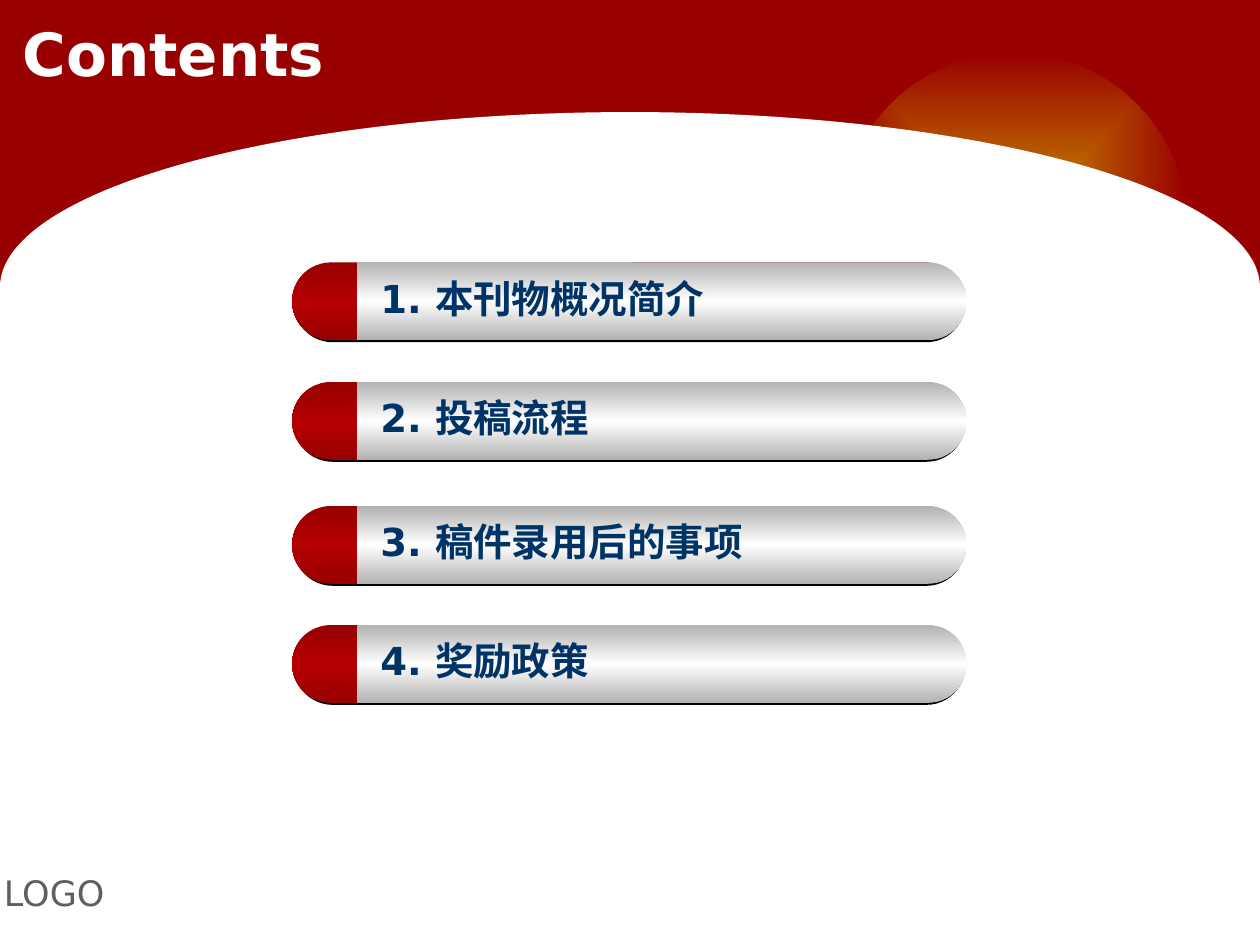
from lxml import etree
from pptx import Presentation
from pptx.dml.color import RGBColor
from pptx.enum.shapes import MSO_SHAPE
from pptx.enum.text import MSO_ANCHOR, MSO_AUTO_SIZE
from pptx.oxml.ns import qn
from pptx.util import Cm, Pt

RED = RGBColor(0x99, 0x00, 0x00)
BRIGHT_RED = RGBColor(0xB4, 0x00, 0x00)
GOLD = RGBColor(0xCC, 0x99, 0x00)
SILVER = RGBColor(0xB2, 0xB2, 0xB2)
GREY = RGBColor(0x5F, 0x5F, 0x5F)
NAVY = RGBColor(0x00, 0x33, 0x66)
WHITE = RGBColor(0xFF, 0xFF, 0xFF)
BLACK = RGBColor(0x00, 0x00, 0x00)

LATIN = "DejaVu Sans"
CJK = "Noto Sans CJK SC"
TIGHT = (0.05, 0.03)  # horizontal and vertical text inset, cm

# number, topic, top of the bar, width of the label (cm)
ITEMS = [
    ("1. ", "本刊物概况简介", 5.29, 8.61),
    ("2. ", "投稿流程", 7.7, 8.61),
    ("3. ", "稿件录用后的事项", 10.2, 10.52),
    ("4. ", "奖励政策", 12.6, 10.52),
]


def set_gradient(sp, colors, radial=False):
    """Spread the colours evenly, top to bottom or from the centre out."""
    sp.fill.gradient()
    grad = sp._element.spPr.find(qn("a:gradFill"))
    for child in list(grad):
        grad.remove(child)
    stops = etree.SubElement(grad, qn("a:gsLst"))
    for i, color in enumerate(colors):
        pos = 100000 * i // (len(colors) - 1)
        stop = etree.SubElement(stops, qn("a:gs"), pos=str(pos))
        etree.SubElement(stop, qn("a:srgbClr"), val=str(color))
    if radial:
        shade = etree.SubElement(grad, qn("a:path"), path="shape")
        etree.SubElement(shade, qn("a:fillToRect"),
                         l="50000", t="50000", r="50000", b="50000")
    else:
        etree.SubElement(grad, qn("a:lin"), ang="5400000", scaled="1")


def add_shape(shapes, kind, x, y, w, h, colors, radial=False, adj=None):
    sp = shapes.add_shape(kind, Cm(x), Cm(y), Cm(w), Cm(h))
    sp.shadow.inherit = False
    sp.line.fill.background()
    if adj is not None:
        sp.adjustments[0] = adj
    if len(colors) == 1:
        sp.fill.solid()
        sp.fill.fore_color.rgb = colors[0]
    else:
        set_gradient(sp, colors, radial)
    return sp


def add_text(s, x, y, w, h, runs, size, color, bold=False, inset=None):
    """Add a one-line text box; runs are (text, font) pairs."""
    tf = s.shapes.add_textbox(Cm(x), Cm(y), Cm(w), Cm(h)).text_frame
    tf.word_wrap = True
    if inset:
        tf.margin_left = tf.margin_right = Cm(inset[0])
        tf.margin_top = tf.margin_bottom = Cm(inset[1])
        tf.auto_size = MSO_AUTO_SIZE.SHAPE_TO_FIT_TEXT
    p = tf.paragraphs[0]
    for text, font in runs:
        r = p.add_run()
        r.text = text
        r.font.name = font
        r.font.size = Pt(size)
        r.font.bold = bold
        r.font.color.rgb = color
        etree.SubElement(r._r.get_or_add_rPr(), qn("a:ea"), typeface=font)
    return tf


def add_backdrop(s, w, h):
    s.background.fill.solid()
    s.background.fill.fore_color.rgb = RED
    # Glowing sun behind the white dome
    add_shape(s.shapes, MSO_SHAPE.OVAL, 16.94, 1.07, 6.99, 6.99,
              [GOLD, RED], radial=True)
    # Dome and the white page below it
    add_shape(s.shapes, MSO_SHAPE.OVAL, 0, 2.26, w, 7.06, [WHITE])
    add_shape(s.shapes, MSO_SHAPE.RECTANGLE, 0, 5.72, w, h - 5.72, [WHITE])


def add_bar(s, x, y, w, h, number, topic, label_w):
    bar = s.shapes.add_group_shape().shapes
    pill = MSO_SHAPE.ROUNDED_RECTANGLE
    silver = [SILVER, WHITE, SILVER]
    # Black edge, red cap, silver body with a square left end
    add_shape(bar, pill, x + 0.03, y + 0.04, w, h, [BLACK], adj=0.5)
    add_shape(bar, pill, x, y, w, h, [RED, BRIGHT_RED, RED], adj=0.5)
    add_shape(bar, pill, x + 2.44, y, w - 2.39, h, silver, adj=0.5)
    add_shape(bar, pill, x + 1.3, y, 5.54, h, silver, adj=0)
    # Label
    tf = add_text(s, x + 1.73, y + 0.4, label_w, 0.84,
                  [(number, LATIN), (topic, CJK)], 22, NAVY, True, TIGHT)
    tf.paragraphs[0].line_spacing = 0.8


def main():
    prs = Presentation()
    prs.slide_width, prs.slide_height = Cm(25.4), Cm(19.05)
    s = prs.slides.add_slide(prs.slide_layouts[6])

    add_backdrop(s, 25.4, 19.05)
    add_text(s, 0.03, 17.53, 2.34, 0.91, [("LOGO", LATIN)], 20, GREY,
             inset=TIGHT)
    title = add_text(s, 0.21, 0.21, 21.8, 1.7, [("Contents", LATIN)], 34,
                     WHITE, True)
    title.vertical_anchor = MSO_ANCHOR.MIDDLE
    for number, topic, top, label_w in ITEMS:
        add_bar(s, 5.89, top, 13.54, 1.57, number, topic, label_w)

    prs.save("out.pptx")


if __name__ == "__main__":
    main()
